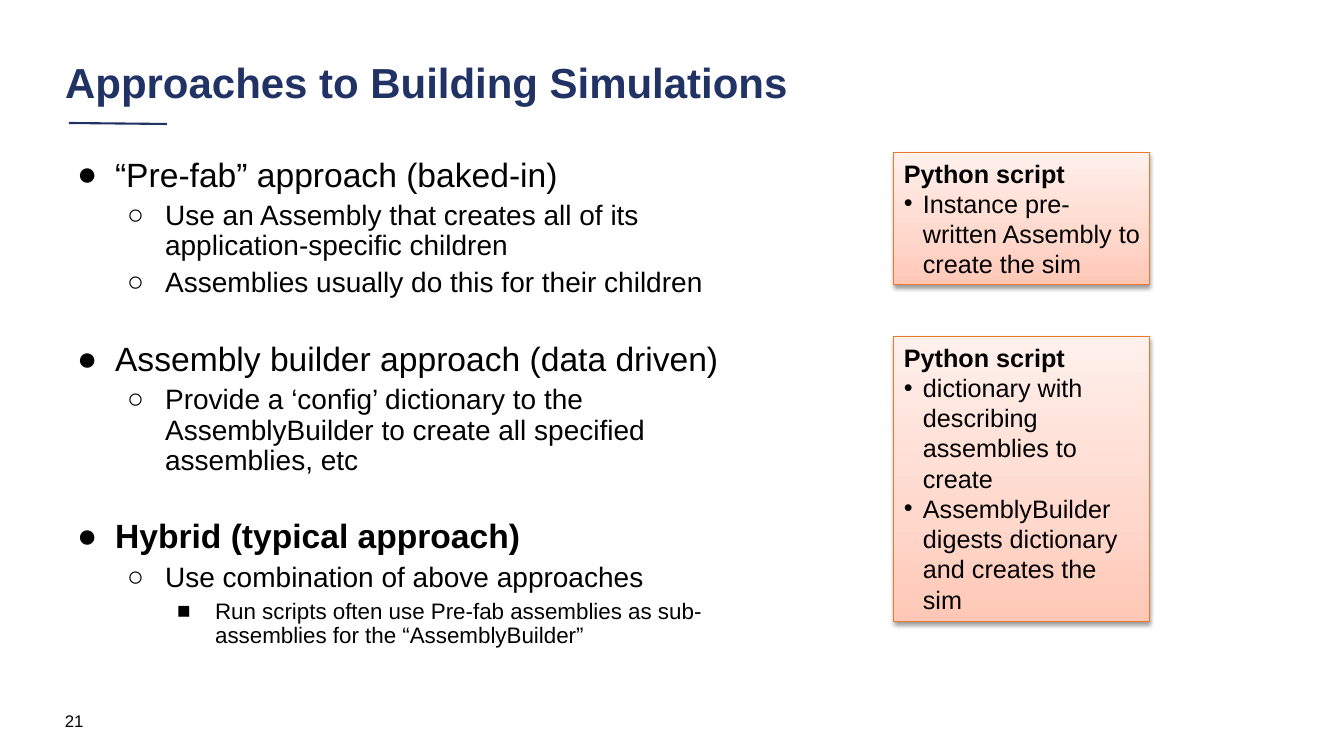
from copy import deepcopy

from lxml import etree
from pptx import Presentation
from pptx.dml.color import RGBColor
from pptx.enum.shapes import MSO_CONNECTOR, MSO_SHAPE
from pptx.enum.text import MSO_ANCHOR, MSO_AUTO_SIZE, PP_ALIGN
from pptx.oxml.ns import qn
from pptx.util import Emu, Pt

STRAIGHT = MSO_CONNECTOR.STRAIGHT
RECTANGLE = MSO_SHAPE.RECTANGLE
TOP, MIDDLE = MSO_ANCHOR.TOP, MSO_ANCHOR.MIDDLE
NO_FIT, GROW = MSO_AUTO_SIZE.NONE, MSO_AUTO_SIZE.SHAPE_TO_FIT_TEXT
LEFT = PP_ALIGN.LEFT

NAVY = RGBColor(0x21, 0x32, 0x65)
BLACK = RGBColor(0, 0, 0)
ORANGE = RGBColor(0xEC, 0x79, 0x2B)
PEACH_STOPS = [
    (0, RGBColor(0xFF, 0xC7, 0xB6)),
    (0.35, RGBColor(0xFF, 0xD7, 0xCB)),
    (1, RGBColor(0xFF, 0xF0, 0xEB)),
]

EMU_PER_PX = 914400 / 100.8
LIST_BULLETS = "●○■"
LIST_SIZES = [24, 20, 16]
SECTION_GAP = 31

APPROACHES = [
    (0, "“Pre-fab” approach (baked-in)"),
    (1, "Use an Assembly that creates all of its application-specific children"),
    (1, "Assemblies usually do this for their children"),
    (0, "Assembly builder approach (data driven)"),
    (1, "Provide a ‘config’ dictionary to the AssemblyBuilder to create all "
        "specified assemblies, etc"),
    (0, "Hybrid (typical approach)"),
    (1, "Use combination of above approaches"),
    (2, "Run scripts often use Pre-fab assemblies as sub-assemblies for the "
        "“AssemblyBuilder”"),
]
BOLD_APPROACH = "Hybrid (typical approach)"


def px(*lengths):
    return [Emu(round(length * EMU_PER_PX)) for length in lengths]


class SlideBuilder:
    def __init__(self, slide, font="Arial"):
        self.slide = slide
        self.font = font

    def fill_para(self, para, text, size, color=BLACK, bold=False):
        para.text = text
        para.alignment = LEFT
        font = para.font
        font.name, font.size, font.bold = self.font, Pt(size), bold
        font.color.rgb = color

    def bullet(self, para, char, margin, hanging):
        properties = para._p.get_or_add_pPr()
        left, indent = px(margin, -hanging)
        properties.set("marL", str(left))
        properties.set("indent", str(indent))
        color = etree.SubElement(properties, qn("a:buClr"))
        etree.SubElement(color, qn("a:srgbClr"), val=str(BLACK))
        etree.SubElement(properties, qn("a:buFont"), typeface=self.font)
        etree.SubElement(properties, qn("a:buChar"), char=char)

    def place(self, shape, bounds, anchor):
        shape.left, shape.top, shape.width, shape.height = px(*bounds)
        frame = shape.text_frame
        frame.word_wrap = True
        frame.auto_size = NO_FIT
        frame.vertical_anchor = anchor
        return frame

    def title(self, text, bounds):
        frame = self.place(self.slide.shapes.title, bounds, MIDDLE)
        para = frame.paragraphs[0]
        self.fill_para(para, text, 30, NAVY, True)
        para.line_spacing = 0.9

    def body(self, items, bounds):
        frame = self.place(self.slide.placeholders[1], bounds, TOP)
        for index, (level, text) in enumerate(items):
            para = frame.add_paragraph() if index else frame.paragraphs[0]
            para.level = level
            self.bullet(para, LIST_BULLETS[level], 50 * (level + 1), 38)
            self.fill_para(para, text, LIST_SIZES[level], bold=text == BOLD_APPROACH)
            para.line_spacing = 0.9
            gap = 5 if level else SECTION_GAP
            para.space_before = Pt(gap if index else 0)

    def label(self, text, size, bounds):
        box = self.slide.shapes.add_textbox(*px(*bounds))
        frame = self.place(box, bounds, MIDDLE)
        self.fill_para(frame.paragraphs[0], text, size)

    def rule(self, start, end):
        line = self.slide.shapes.add_connector(STRAIGHT, *px(*start, *end))
        line.line.color.rgb = NAVY
        line.line.width = Pt(1.5)
        etree.SubElement(line._element.spPr, qn("a:effectLst"))

    def gradient(self, shape):
        shape.fill.gradient()
        shape.fill.gradient_angle = 90
        stop_list = shape._element.spPr.find(".//" + qn("a:gsLst"))
        stop_list.append(deepcopy(stop_list[-1]))
        for stop, (position, color) in zip(shape.fill.gradient_stops, PEACH_STOPS):
            stop.position = position
            stop.color.rgb = color

    def soft_shadow(self, shape):
        shape.shadow.inherit = False
        effects = shape._element.spPr.find(qn("a:effectLst"))
        shadow = etree.SubElement(effects, qn("a:outerShdw"), blurRad="40000",
                                  dist="20000", dir="5400000", rotWithShape="0")
        color = etree.SubElement(shadow, qn("a:srgbClr"), val=str(BLACK))
        etree.SubElement(color, qn("a:alpha"), val="38000")

    def card(self, heading, points, bounds):
        card = self.slide.shapes.add_shape(RECTANGLE, *px(*bounds))
        self.gradient(card)
        card.line.color.rgb = ORANGE
        card.line.width = Pt(0.75)
        self.soft_shadow(card)
        frame = self.place(card, bounds, TOP)
        frame.auto_size = GROW
        self.fill_para(frame.paragraphs[0], heading, 18, bold=True)
        for point in points:
            para = frame.add_paragraph()
            self.bullet(para, "•", 19, 19)
            self.fill_para(para, point, 18)


def main():
    deck = Presentation()
    deck.slide_width, deck.slide_height = px(1344, 756)
    page = SlideBuilder(deck.slides.add_slide(deck.slide_layouts[1]))

    page.rule((69, 123), (167, 124))
    page.label("21", 12, (55, 701, 302, 40))
    page.title("Approaches to Building Simulations", (55, 46, 1121, 77))
    page.body(APPROACHES, (55, 153, 719, 539))
    page.card("Python script",
              ["dictionary with describing assemblies to create",
               "AssemblyBuilder digests dictionary and creates the sim"],
              (894, 337, 256, 285))
    page.card("Python script",
              ["Instance pre-written Assembly to create the sim"],
              (894, 153, 256, 132))
    deck.save("out.pptx")


if __name__ == "__main__":
    main()
